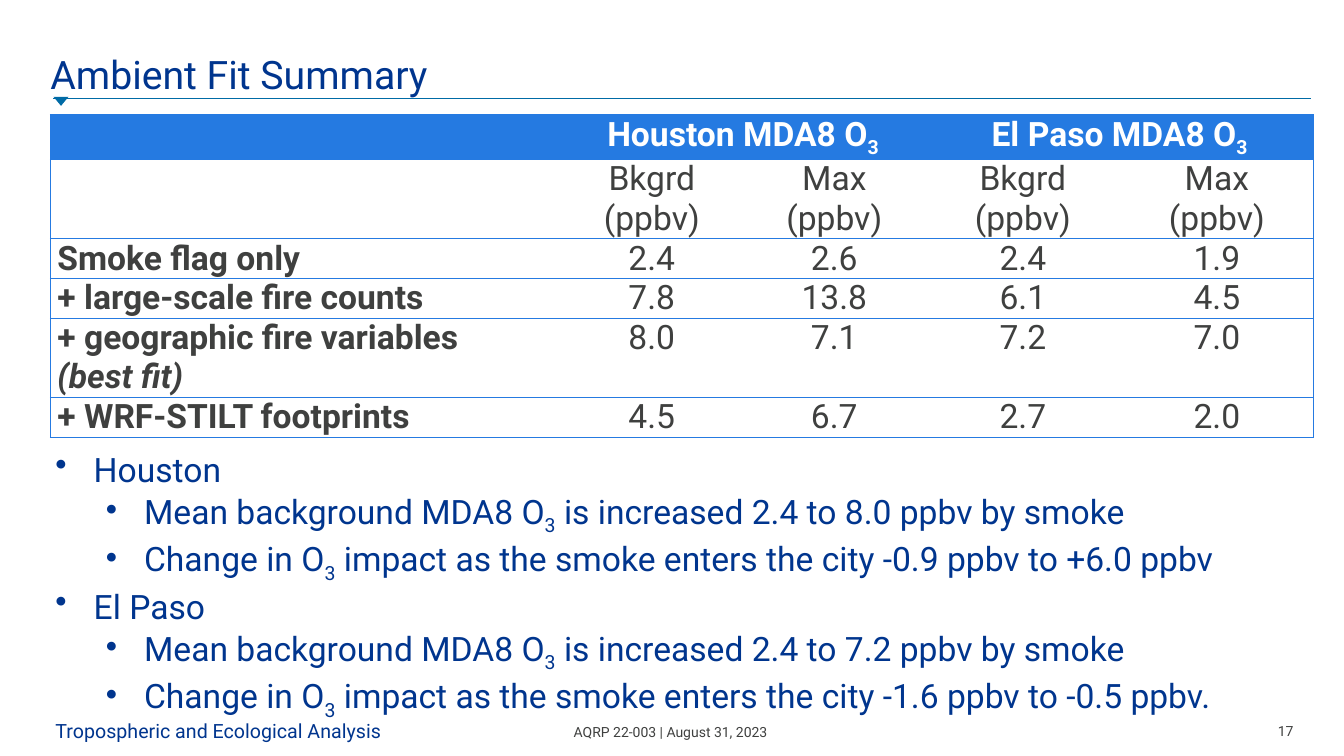
import dataclasses

import pptx
import pptx.dml.color
import pptx.enum.shapes
import pptx.enum.text
import pptx.oxml
import pptx.oxml.ns
import pptx.util

Inches = pptx.util.Inches
Pt = pptx.util.Pt
ALIGN = pptx.enum.text.PP_ALIGN
ANCHOR = pptx.enum.text.MSO_ANCHOR
SHAPE = pptx.enum.shapes.MSO_SHAPE


@dataclasses.dataclass(frozen=True)
class Theme:
    """Colours, font and type sizes of the slide."""
    navy: str = "00358E"
    teal: str = "006BA6"
    blue: str = "257AE1"
    gray: str = "3F403F"
    white: str = "FFFFFF"
    font: str = "Roboto"
    title: int = 28
    body: int = 24
    brand: int = 14
    note: int = 10
    rule: float = 0.75


THEME = Theme()

GRID = [
    ["", "Houston MDA8 O_3", "", "El Paso MDA8 O_3", ""],
    ["", "Bkgrd (ppbv)", "Max (ppbv)", "Bkgrd (ppbv)", "Max\n(ppbv)"],
    ["Smoke flag only", "2.4", "2.6", "2.4", "1.9"],
    ["+ large-scale fire counts", "7.8", "13.8", "6.1", "4.5"],
    ["+ geographic fire variables\n(best fit)", "8.0", "7.1", "7.2", "7.0"],
    ["+ WRF-STILT footprints", "4.5", "6.7", "2.7", "2.0"],
]
WIDTHS = [5.06, 1.81, 1.81, 1.93, 1.92]
HEIGHTS = [0.44, 0.79, 0.39, 0.39, 0.79, 0.39]

POINTS = [
    (0, "Houston"),
    (1, "Mean background MDA8 O_3_ is increased 2.4 to 8.0 ppbv by smoke"),
    (1, "Change in O_3_ impact as the smoke enters the city -0.9 ppbv to +6.0 ppbv"),
    (0, "El Paso"),
    (1, "Mean background MDA8 O_3_ is increased 2.4 to 7.2 ppbv by smoke"),
    (1, "Change in O_3_ impact as the smoke enters the city -1.6 ppbv to -0.5 ppbv."),
]


def apply(item, values):
    """Set each named attribute on the item."""
    for name, value in values.items():
        setattr(item, name, value)


def rgb(code):
    """Turn a hex code into a colour."""
    return pptx.dml.color.RGBColor.from_string(code)


def write(para, text, size, color, **style):
    """Add runs to a paragraph, with parts between underscores as subscripts."""
    for i, part in enumerate(text.split("_")):
        run = para.add_run()
        run.text = part
        apply(run.font, {"name": THEME.font, "size": Pt(size), **style})
        run.font.color.rgb = rgb(color)
        if i % 2:
            run._r.get_or_add_rPr().set("baseline", "-25000")


def frame(slide, box, inset=0):
    """Add a text box and return its text frame."""
    text = slide.shapes.add_textbox(*map(Inches, box)).text_frame
    apply(text, {"word_wrap": True, "margin_left": Inches(inset),
                 "margin_right": 0, "margin_top": 0, "margin_bottom": 0})
    return text


def head(slide, box):
    """Place the title and the rule with its marker below."""
    left, top, width, height = box
    title = slide.shapes.title
    apply(title, {"left": Inches(left), "top": Inches(top),
                  "width": Inches(10), "height": Inches(height)})
    text = title.text_frame
    apply(text, {"margin_left": 0, "margin_right": 0, "margin_top": 0,
                 "margin_bottom": 0, "vertical_anchor": ANCHOR.BOTTOM,
                 "auto_size": pptx.enum.text.MSO_AUTO_SIZE.NONE})
    para = text.paragraphs[0]
    apply(para, {"alignment": ALIGN.LEFT, "line_spacing": 0.8})
    write(para, "Ambient Fit Summary", THEME.title, THEME.navy)

    low = top + height
    start, end, level = map(Inches, (left + 0.03, left + width, low + 0.02))
    rule = slide.shapes.add_connector(
        pptx.enum.shapes.MSO_CONNECTOR.STRAIGHT, start, level, end, level)
    rule.line.color.rgb = rgb(THEME.teal)
    rule.line.width = Pt(THEME.rule)
    props = rule._element.spPr
    props.append(props.makeelement(pptx.oxml.ns.qn("a:effectLst"), {}))

    mark = slide.shapes.add_shape(
        SHAPE.ISOSCELES_TRIANGLE, start, Inches(low), Inches(0.15), Inches(0.09))
    mark.rotation = 180
    mark.shadow.inherit = False
    mark.fill.solid()
    mark.fill.fore_color.rgb = rgb(THEME.teal)
    mark.line.fill.background()


def edge(cell, sides):
    """Draw the cell's borders on the given sides and clear the others."""
    props = cell._tc.get_or_add_tcPr()
    for side in "LRTB":
        fill = (f'<a:solidFill><a:srgbClr val="{THEME.blue}"/></a:solidFill>'
                if side in sides else "<a:noFill/>")
        props.append(pptx.oxml.parse_xml(
            f'<a:ln{side} {pptx.oxml.ns.nsdecls("a")} w="{Pt(THEME.rule)}">'
            f"{fill}</a:ln{side}>"))


def fits(slide, box):
    """Build the table of fits."""
    shape = slide.shapes.add_table(len(GRID), len(WIDTHS), *map(Inches, box))
    table = shape.table
    apply(table, {"first_row": False, "horz_banding": False})
    style = table._tbl.tblPr.find(pptx.oxml.ns.qn("a:tableStyleId"))
    style.text = "{2D5ABB26-0587-4C30-8999-92F81FD0307C}"
    for col, width in zip(table.columns, WIDTHS):
        col.width = Inches(width)
    for row, height in zip(table.rows, HEIGHTS):
        row.height = Inches(height)
    for c in (1, 3):
        table.cell(0, c).merge(table.cell(0, c + 1))
    for r, row in enumerate(GRID):
        for c, text in enumerate(row):
            cell = table.cell(r, c)
            last = c + cell.span_width == len(WIDTHS)
            edge(cell, "TB" + "L" * (c == 0) + "R" * last)
            fill_cell(cell, text, r == 0, c == 0)


def fill_cell(cell, text, top, label):
    """Format one table cell and write its lines."""
    apply(cell, {"margin_left": Inches(0.07), "margin_right": Inches(0.07),
                 "margin_top": 0, "margin_bottom": 0})
    if top:
        cell.fill.solid()
        cell.fill.fore_color.rgb = rgb(THEME.blue)
    else:
        cell.fill.background()
    if not text:
        return
    for i, line in enumerate(text.split("\n")):
        body = cell.text_frame
        para = body.add_paragraph() if i else body.paragraphs[0]
        para.alignment = ALIGN.LEFT if label else ALIGN.CENTER
        write(para, line, THEME.body, THEME.white if top else THEME.gray,
              bold=top or label, italic=label and i > 0)


def points(slide, box):
    """Write the two-level bullet list."""
    text = frame(slide, box, 0.05)
    for i, (level, line) in enumerate(POINTS):
        para = text.add_paragraph() if i else text.paragraphs[0]
        props = para._p.get_or_add_pPr()
        props.set("marL", str(Inches(0.38 + 0.5 * level)))
        props.set("indent", str(Inches(-0.38)))
        props.append(props.makeelement(pptx.oxml.ns.qn("a:buChar"), {"char": "•"}))
        para.level = level
        if i:
            para.space_before = Pt(1.2)
        write(para, line, THEME.body, THEME.navy)


def foot(slide, box):
    """Write the footer texts along the bottom."""
    left, top, width, height = box
    items = [
        (0, 0, 4.2, 0.05, ALIGN.LEFT, "Tropospheric and Ecological Analysis",
         THEME.brand, THEME.navy),
        (4.56, 0.05, 3.18, 0, ALIGN.CENTER, "AQRP 22-003 | August 31, 2023",
         THEME.note, THEME.gray),
        (width - 0.4, 0.04, 0.4, 0, ALIGN.RIGHT, "17", THEME.note, THEME.gray),
    ]
    for x, y, w, inset, align, line, size, color in items:
        para = frame(slide, (left + x, top + y, w, height - y), inset).paragraphs[0]
        para.alignment = align
        write(para, line, size, color)


def main():
    """Build and save the slide."""
    deck = pptx.Presentation()
    apply(deck, {"slide_width": Inches(13.33), "slide_height": Inches(7.5)})
    slide = deck.slides.add_slide(deck.slide_layouts.get_by_name("Title Only"))
    head(slide, (0.5, 0.23, 12.5, 0.73))
    fits(slide, (0.5, 1.14, sum(WIDTHS), sum(HEIGHTS)))
    points(slide, (0.5, 4.45, 12.5, 2.65))
    foot(slide, (0.5, 7.13, 12.33, 0.24))
    deck.save("out.pptx")


if __name__ == "__main__":
    main()
